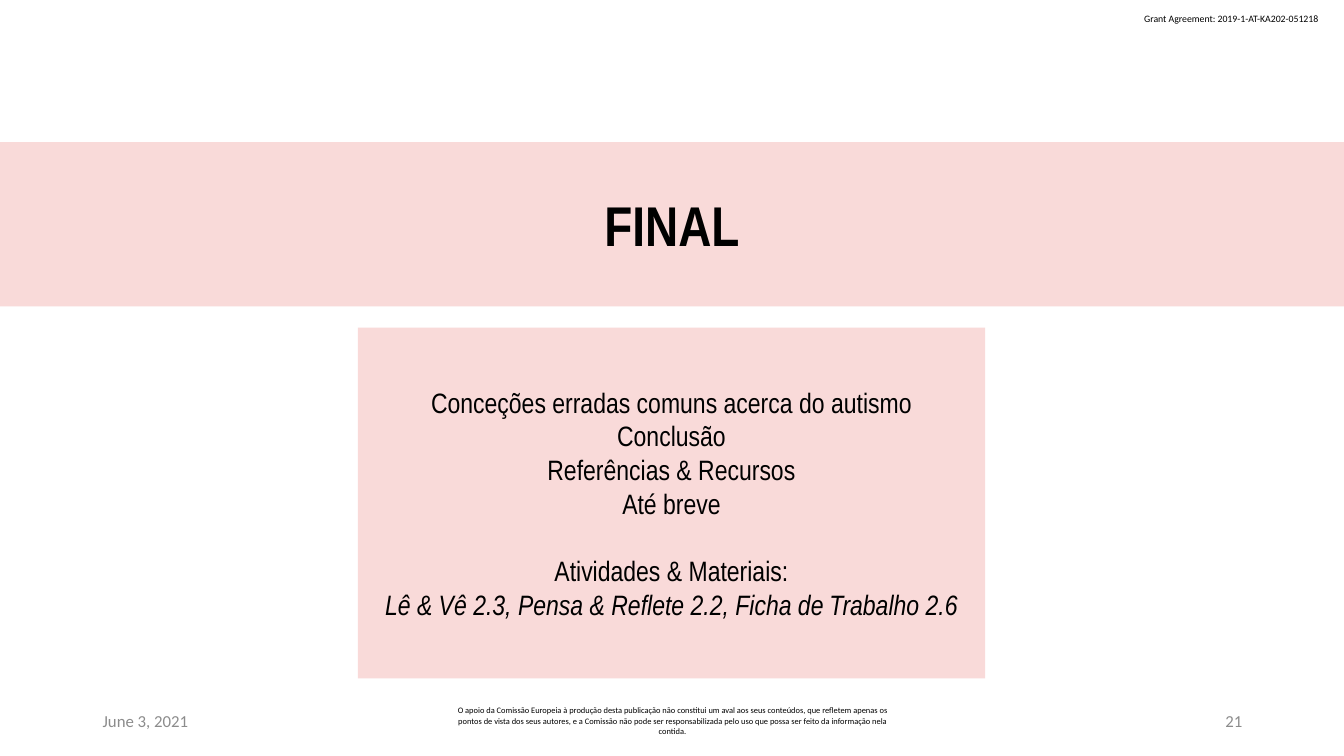
from pptx import Presentation
from pptx.dml.color import RGBColor
from pptx.enum.shapes import MSO_SHAPE
from pptx.enum.text import MSO_ANCHOR, PP_ALIGN
from pptx.util import Inches, Pt

PINK = RGBColor(0xF9, 0xDA, 0xD9)
BLACK = RGBColor(0, 0, 0)
GREY = RGBColor(0x8C, 0x8C, 0x8C)
LEFT, CENTER, RIGHT = PP_ALIGN.LEFT, PP_ALIGN.CENTER, PP_ALIGN.RIGHT
TOP, MIDDLE = MSO_ANCHOR.TOP, MSO_ANCHOR.MIDDLE
RECTANGLE = MSO_SHAPE.RECTANGLE

TOPICS = [
    "Conceções erradas comuns acerca do autismo",
    "Conclusão",
    "Referências & Recursos",
    "Até breve",
]
ACTIVITIES = [
    "Atividades & Materiais:",
    "Lê & Vê 2.3, Pensa & Reflete 2.2, Ficha de Trabalho 2.6",
]
DISCLAIMER = (
    "O apoio da Comissão Europeia à produção desta publicação não constitui "
    "um aval aos seus conteúdos, que refletem apenas os pontos de vista dos "
    "seus autores, e a Comissão não pode ser responsabilizada pelo uso que "
    "possa ser feito da informação nela contida."
)


def write(frame, lines, font, size, color, align):
    frame.text = "\n".join(lines)
    for paragraph in frame.paragraphs:
        paragraph.alignment = align
        for run in paragraph.runs:
            run.font.name = font
            run.font.size = Pt(size)
            run.font.color.rgb = color


def add_label(slide, box, text, size, color, align=LEFT, anchor=MIDDLE, wrap=True):
    frame = slide.shapes.add_textbox(*map(Inches, box)).text_frame
    frame.word_wrap = wrap
    frame.vertical_anchor = anchor
    write(frame, [text], "Calibri", size, color, align)


def add_panel(slide, box, lines, size):
    panel = slide.shapes.add_shape(RECTANGLE, *map(Inches, box))
    panel.shadow.inherit = False
    panel.fill.solid()
    panel.fill.fore_color.rgb = PINK
    panel.line.fill.background()
    frame = panel.text_frame
    frame.word_wrap = True
    frame.vertical_anchor = MIDDLE
    frame.margin_left = frame.margin_right = Inches(0.13)
    frame.margin_top = frame.margin_bottom = Inches(0.07)
    write(frame, lines, "Arial Narrow", size, BLACK, CENTER)
    return frame.paragraphs


def main():
    prs = Presentation()
    prs.slide_width, prs.slide_height = Inches(13.33), Inches(7.5)
    slide = prs.slides.add_slide(prs.slide_layouts[6])

    # Header
    add_label(slide, (11.25, 0.08, 1.97, 0.22),
              "Grant Agreement: 2019-1-AT-KA202-051218", 7, BLACK,
              anchor=TOP, wrap=False)

    # Footer
    add_label(slide, (0.92, 6.95, 3, 0.4), "June 3, 2021", 12, GREY)
    add_label(slide, (4.42, 6.95, 4.5, 0.4), DISCLAIMER, 6, BLACK, CENTER)
    add_label(slide, (9.42, 6.95, 3, 0.4), "21", 12, GREY, RIGHT)

    # Title band
    title = add_panel(slide, (0, 1.41, 13.33, 1.63), ["FINAL"], 40)
    title[0].runs[0].font.bold = True

    # Contents: topics, then activities set off by one line of space
    contents = add_panel(slide, (3.55, 3.25, 6.22, 3.48), TOPICS + ACTIVITIES, 20)
    contents[len(TOPICS)].space_before = Pt(24)
    contents[-1].runs[0].font.italic = True

    prs.save("out.pptx")


if __name__ == "__main__":
    main()
